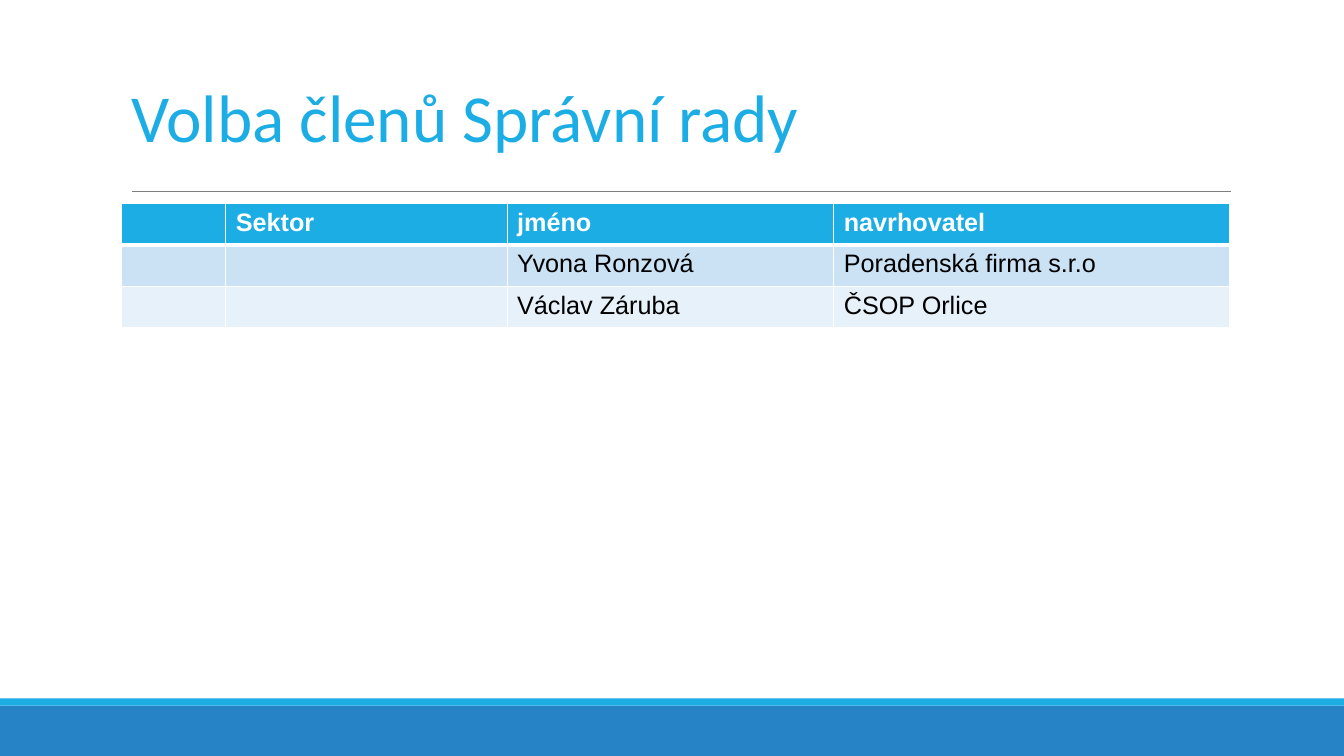
from lxml import etree
from pptx import Presentation
from pptx.dml.color import RGBColor
from pptx.enum.shapes import MSO_CONNECTOR, MSO_SHAPE
from pptx.enum.text import MSO_ANCHOR, MSO_AUTO_SIZE, PP_ALIGN
from pptx.oxml.ns import qn
from pptx.util import Inches, Pt

STRAIGHT = MSO_CONNECTOR.STRAIGHT
RECTANGLE = MSO_SHAPE.RECTANGLE
THEME = {
    "accent": RGBColor.from_string("1CADE4"),
    "footer": RGBColor.from_string("2683C6"),
    "rule": RGBColor.from_string("7F7F7F"),
    "white": RGBColor.from_string("FFFFFF"),
    "black": RGBColor.from_string("000000"),
    "bands": [RGBColor.from_string(code) for code in ("CBE2F5", "E7F1FA")],
    "title_size": Pt(48),
    "table_size": Pt(18),
}
WIDTH, HEIGHT = 13.33, 7.5
LEFT, CONTENT_WIDTH = 1.2, 11
TABLE_TOP, ROW_HEIGHT = 2.02, 0.41
COLUMN_WIDTHS = [1.04, 2.79, 3.24, 3.93]
ROWS = [
    ["", "Sektor", "jméno", "navrhovatel"],
    ["", "", "Yvona Ronzová", "Poradenská firma s.r.o"],
    ["", "", "Václav Záruba", "ČSOP Orlice"],
]


def apply_format(target, values):
    for name, value in values.items():
        setattr(target, name, value)


def add_cell_border(cell, side, points):
    properties = cell._tc.get_or_add_tcPr()
    line = etree.SubElement(properties, qn(f"a:ln{side}"), w=str(Pt(points)))
    fill = etree.SubElement(line, qn("a:solidFill"))
    etree.SubElement(fill, qn("a:srgbClr"), val=str(THEME["white"]))


presentation = Presentation()
presentation.slide_width = Inches(WIDTH)
presentation.slide_height = Inches(HEIGHT)
slide = presentation.slides.add_slide(presentation.slide_layouts[5])

# Footer bands
for top, height, color in [(7, 0.5, "footer"), (6.93, 0.07, "accent")]:
    band = slide.shapes.add_shape(
        RECTANGLE, 0, Inches(top), presentation.slide_width, Inches(height))
    band.shadow.inherit = False
    band.fill.solid()
    band.fill.fore_color.rgb = THEME[color]
    band.line.fill.background()

# Rule below the title
rule = slide.shapes.add_connector(
    STRAIGHT, Inches(1.31), Inches(1.9), Inches(12.21), Inches(1.9))
rule.line.color.rgb = THEME["rule"]
rule.line.width = Pt(0.75)
etree.SubElement(rule._element.spPr, qn("a:effectLst"))

# Title
title = slide.shapes.title
apply_format(title, {
    "left": Inches(LEFT), "top": Inches(0.31),
    "width": Inches(CONTENT_WIDTH), "height": Inches(1.29),
})
title.text = "Volba členů Správní rady"
apply_format(title.text_frame, {
    "vertical_anchor": MSO_ANCHOR.BOTTOM,
    "auto_size": MSO_AUTO_SIZE.NONE,
    "word_wrap": True,
})
paragraph = title.text_frame.paragraphs[0]
apply_format(paragraph, {"alignment": PP_ALIGN.LEFT, "line_spacing": 0.85})
apply_format(paragraph.font, {"name": "Calibri", "size": THEME["title_size"]})
paragraph.font.color.rgb = THEME["accent"]

# Candidates table
table = slide.shapes.add_table(
    len(ROWS), len(COLUMN_WIDTHS), Inches(LEFT), Inches(TABLE_TOP),
    Inches(CONTENT_WIDTH), Inches(ROW_HEIGHT * len(ROWS))).table
for column, width in zip(table.columns, COLUMN_WIDTHS):
    column.width = Inches(width)

row_fills = [THEME["accent"], *THEME["bands"]]
for row_index, (row, texts) in enumerate(zip(table.rows, ROWS)):
    row.height = Inches(ROW_HEIGHT)
    is_header = row_index == 0
    border_widths = {
        "L": 1, "R": 1,
        "T": 3 if row_index == 1 else 1,
        "B": 3 if is_header else 1,
    }
    for cell, text in zip(row.cells, texts):
        for side, points in border_widths.items():
            add_cell_border(cell, side, points)
        cell.fill.solid()
        cell.fill.fore_color.rgb = row_fills[row_index]
        if text:
            cell.text = text
            font = cell.text_frame.paragraphs[0].font
            apply_format(font, {
                "name": "Arial", "size": THEME["table_size"], "bold": is_header,
            })
            font.color.rgb = THEME["white" if is_header else "black"]

presentation.save("out.pptx")
